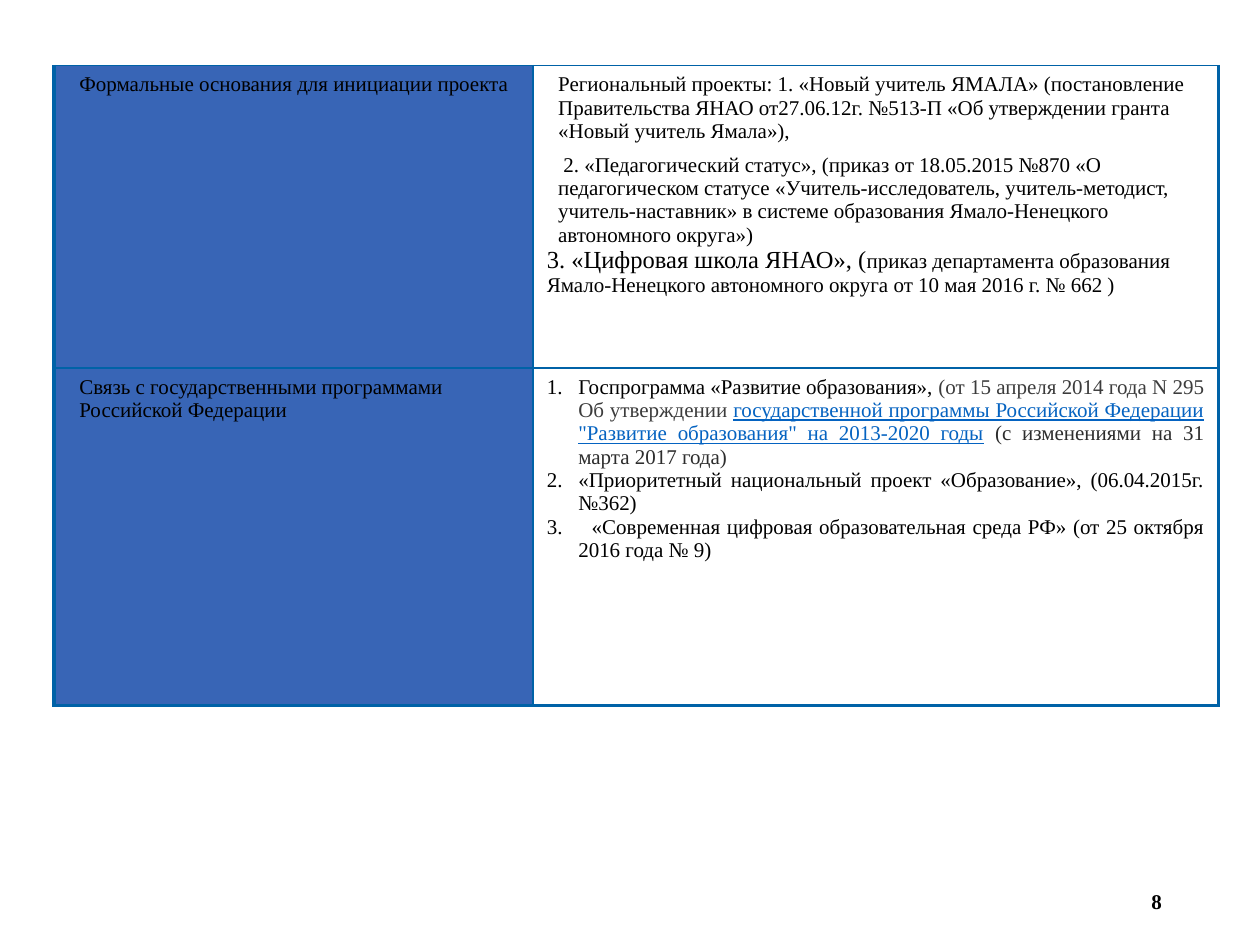
from dataclasses import dataclass

from lxml import etree
from pptx import Presentation
from pptx.dml.color import RGBColor
from pptx.enum.text import MSO_ANCHOR, PP_ALIGN
from pptx.oxml.ns import qn
from pptx.util import Inches, Pt

LEFT, RIGHT, JUSTIFY = PP_ALIGN.LEFT, PP_ALIGN.RIGHT, PP_ALIGN.JUSTIFY
MIDDLE = MSO_ANCHOR.MIDDLE


@dataclass(frozen=True)
class Theme:
    font: str = "Times New Roman"
    body: int = 12
    large: int = 14
    black: str = "000000"
    gray: str = "3C3C3C"
    dark: str = "2D2D2D"
    link: str = "0563C1"
    border: str = "0062A7"
    label_fill: str = "3865B6"
    detail_fill: str = "FFFFFF"
    thin: float = 1
    thick: float = 2.25


THEME = Theme()

# Content: each paragraph is (kind, spans), each span is (text, format)
ROWS = [
    (
        [("indented", [("Формальные основания для инициации проекта", {})])],
        [
            ("indented", [("Региональный проекты: 1. «Новый учитель ЯМАЛА» (постановление "
                           "Правительства ЯНАО от27.06.12г. №513-П «Об утверждении гранта "
                           "«Новый учитель Ямала»),", {})]),
            ("indented", [(" 2. «Педагогический статус», (приказ от 18.05.2015 №870 «О "
                           "педагогическом статусе «Учитель-исследователь, учитель-методист, "
                           "учитель-наставник» в системе образования Ямало-Ненецкого "
                           "автономного округа»)", {})]),
            ("plain", [("3. «Цифровая школа ЯНАО», (", {"size": THEME.large}),
                       ("приказ департамента образования Ямало-Ненецкого автономного "
                        "округа от 10 мая 2016 г. № 662 )", {})]),
        ],
    ),
    (
        [("indented", [("Связь с государственными программами Российской Федерации", {})])],
        [
            ("numbered", [("Госпрограмма «Развитие образования»,", {}),
                          (" (от 15 апреля 2014 года N 295\vОб утверждении ",
                           {"color": THEME.gray}),
                          ("государственной программы Российской Федерации "
                           "\"Развитие образования\" на 2013-2020 годы",
                           {"color": THEME.link, "underline": True}),
                          (" ", {"color": THEME.gray}),
                          ("(с изменениями на 31 марта 2017 года)", {"color": THEME.dark})]),
            ("numbered", [("«Приоритетный национальный проект «Образование», "
                           "(06.04.2015г. №362) ", {})]),
            ("numbered", [("  «Современная цифровая образовательная среда РФ» "
                           "(от 25 октября 2016 года № 9) ", {})]),
        ],
    ),
]
PAGE_NUMBER = "8"

# Paragraph kinds: alignment, left margin, first-line indent, space before
KINDS = {
    "plain": (LEFT, 0, 0, 0),
    "indented": (LEFT, 0.09, 0, 6),
    "numbered": (JUSTIFY, 0.25, -0.25, 0),
}
TABLE_LEFT, TABLE_TOP = 0.43, 0.52
COLUMN_WIDTHS = (3.8, 5.44)
ROW_HEIGHTS = (2.4, 2.68)
CELL_INSETS = (0.11, 0.06)


def add_span(para, text, size=THEME.body, color=THEME.black, bold=False, underline=False):
    for index, part in enumerate(text.split("\v")):
        if index:
            para.add_line_break()
        span = para.add_run()
        span.text = part
        span.font.name = THEME.font
        span.font.size = Pt(size)
        span.font.bold = bold
        span.font.underline = underline
        span.font.color.rgb = RGBColor.from_string(color)


def format_paragraph(para, kind):
    para.alignment, margin, indent, before = KINDS[kind]
    para.space_before = Pt(before)
    properties = para._p.get_or_add_pPr()
    properties.set("marL", str(Inches(margin)))
    properties.set("indent", str(Inches(indent)))
    if kind == "numbered":
        bullet_font = etree.SubElement(properties, qn("a:buFont"))
        bullet_font.set("typeface", "+mj-lt")
        etree.SubElement(properties, qn("a:buAutoNum")).set("type", "arabicPeriod")


def set_borders(cell, widths):
    # Border lines come before the fill in the cell properties
    properties = cell._tc.get_or_add_tcPr()
    for index, (side, width) in enumerate(widths.items()):
        line = etree.Element(qn(f"a:ln{side}"), w=str(Pt(width)))
        fill = etree.SubElement(line, qn("a:solidFill"))
        etree.SubElement(fill, qn("a:srgbClr")).set("val", THEME.border)
        properties.insert(index, line)


def fill_cell(cell, paragraphs, color, widths):
    cell.margin_left = cell.margin_right = Inches(CELL_INSETS[0])
    cell.margin_top = cell.margin_bottom = Inches(CELL_INSETS[1])
    cell.fill.solid()
    cell.fill.fore_color.rgb = RGBColor.from_string(color)
    set_borders(cell, widths)
    frame = cell.text_frame
    for index, (kind, spans) in enumerate(paragraphs):
        para = frame.add_paragraph() if index else frame.paragraphs[0]
        format_paragraph(para, kind)
        for text, style in spans:
            add_span(para, text, **style)


def add_project_table(page):
    table = page.shapes.add_table(
        len(ROWS), len(COLUMN_WIDTHS), Inches(TABLE_LEFT), Inches(TABLE_TOP),
        Inches(sum(COLUMN_WIDTHS)), Inches(sum(ROW_HEIGHTS))).table
    table.first_row = table.horz_banding = False
    for column, width in zip(table.columns, COLUMN_WIDTHS):
        column.width = Inches(width)
    for row, height in zip(table.rows, ROW_HEIGHTS):
        row.height = Inches(height)

    # Outer edges are thick except the top one
    fills = (THEME.label_fill, THEME.detail_fill)
    for row_index, row in enumerate(ROWS):
        for column_index, paragraphs in enumerate(row):
            widths = {
                "L": THEME.thick if column_index == 0 else THEME.thin,
                "R": THEME.thick if column_index == len(row) - 1 else THEME.thin,
                "T": THEME.thin,
                "B": THEME.thick if row_index == len(ROWS) - 1 else THEME.thin,
            }
            fill_cell(table.cell(row_index, column_index), paragraphs,
                      fills[column_index], widths)


def add_page_number(page):
    box = page.shapes.add_textbox(Inches(7.07), Inches(6.95), Inches(2.25), Inches(0.4))
    box.text_frame.word_wrap = True
    box.text_frame.vertical_anchor = MIDDLE
    para = box.text_frame.paragraphs[0]
    para.alignment = RIGHT
    add_span(para, PAGE_NUMBER, bold=True)


def main():
    deck = Presentation()
    deck.slide_width, deck.slide_height = Inches(10), Inches(7.5)
    page = deck.slides.add_slide(deck.slide_layouts[6])
    add_page_number(page)
    add_project_table(page)
    deck.save("out.pptx")


if __name__ == "__main__":
    main()
